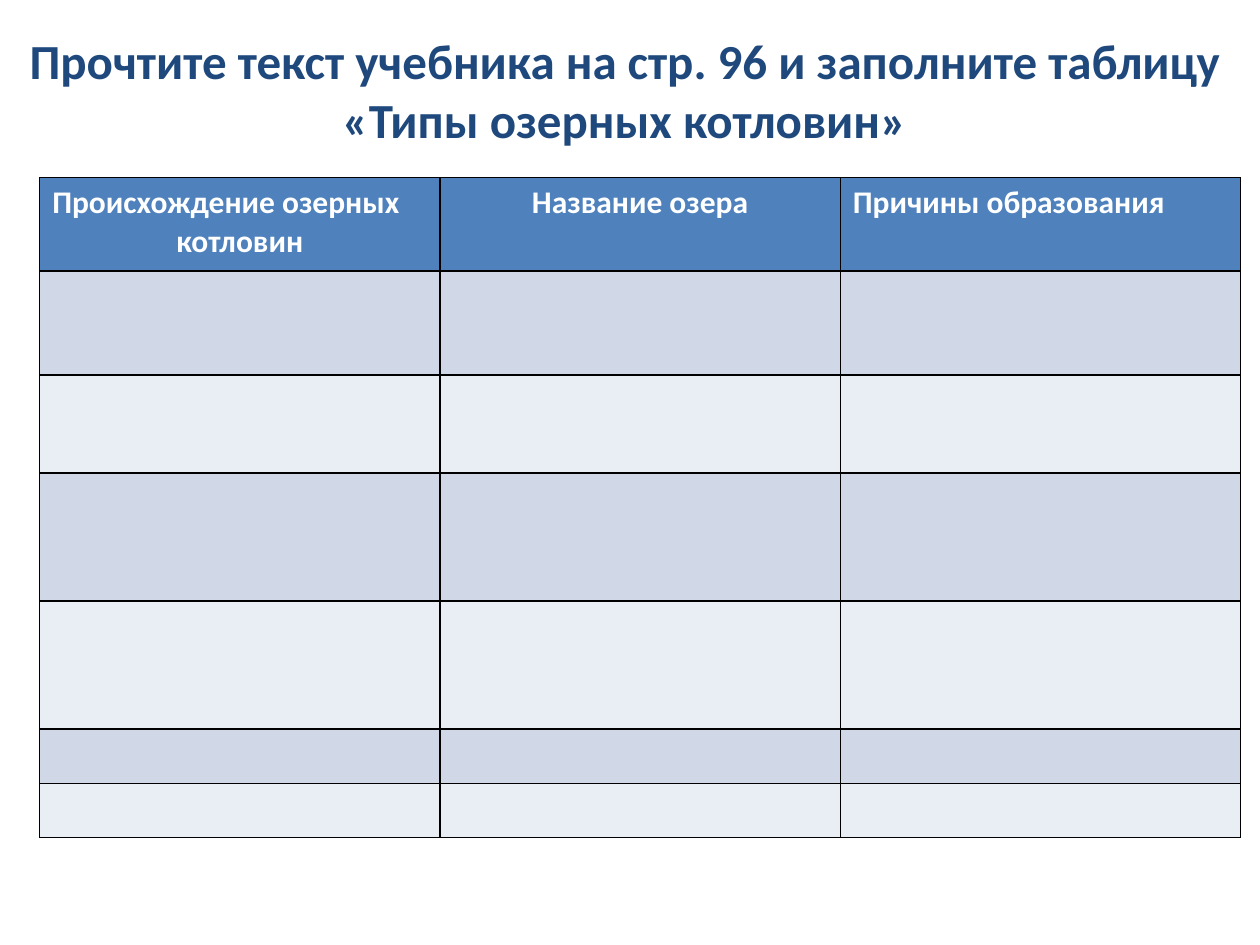
from dataclasses import dataclass

from lxml.etree import SubElement
from pptx import Presentation
from pptx.dml.color import RGBColor
from pptx.enum.text import MSO_ANCHOR, PP_ALIGN
from pptx.oxml.ns import qn
from pptx.util import Cm, Pt


@dataclass(frozen=True)
class Theme:
    font: str = "Calibri"
    title_size: int = 28
    table_size: int = 18
    title: str = "1F497D"
    header_text: str = "FFFFFF"
    header_fill: str = "4F81BD"
    bands: tuple = ("D0D8E8", "E9EDF4")
    border: str = "000000"
    border_width: int = 1


THEME = Theme()
TITLE = "Прочтите текст учебника на стр. 96 и заполните таблицу \v«Типы озерных котловин» "
# Each column heading is a list of (text, alignment) paragraphs
HEADINGS = [
    [("Происхождение озерных", PP_ALIGN.LEFT), ("котловин", PP_ALIGN.CENTER)],
    [("Название озера", PP_ALIGN.CENTER)],
    [("Причины образования", PP_ALIGN.LEFT)],
]
COLUMN_WIDTH = 8.07
ROW_HEIGHTS = [1.88, 2.1, 1.98, 2.58, 2.58, 1.09, 1.09]


def write_paragraph(p, text, align, size, color):
    p.text = text
    p.alignment = align
    p.font.name = THEME.font
    p.font.size = Pt(size)
    p.font.bold = True
    p.font.color.rgb = RGBColor.from_string(color)


def add_title(s):
    tf = s.shapes.add_textbox(Cm(0), Cm(0.2), Cm(25.4), Cm(3.2)).text_frame
    tf.word_wrap = True
    tf.vertical_anchor = MSO_ANCHOR.MIDDLE
    write_paragraph(tf.paragraphs[0], TITLE, PP_ALIGN.CENTER,
                    THEME.title_size, THEME.title)


def style_cell(cell, fill):
    # Borders must come before the fill in the cell properties
    tc_pr = cell._tc.get_or_add_tcPr()
    for side in ("a:lnL", "a:lnR", "a:lnT", "a:lnB"):
        ln = SubElement(tc_pr, qn(side), w=str(Pt(THEME.border_width)))
        solid = SubElement(ln, qn("a:solidFill"))
        SubElement(solid, qn("a:srgbClr"), val=THEME.border)
    cell.fill.solid()
    cell.fill.fore_color.rgb = RGBColor.from_string(fill)


def fill_heading(cell, heading):
    tf = cell.text_frame
    for i, (text, align) in enumerate(heading):
        p = tf.add_paragraph() if i else tf.paragraphs[0]
        write_paragraph(p, text, align, THEME.table_size, THEME.header_text)


def add_basin_table(s):
    table = s.shapes.add_table(
        len(ROW_HEIGHTS), len(HEADINGS), Cm(0.8), Cm(3.58),
        Cm(COLUMN_WIDTH * len(HEADINGS)), Cm(sum(ROW_HEIGHTS))).table
    for column in table.columns:
        column.width = Cm(COLUMN_WIDTH)

    # Header row, then alternating bands
    for i, (row, height) in enumerate(zip(table.rows, ROW_HEIGHTS)):
        row.height = Cm(height)
        fill = THEME.bands[(i - 1) % 2] if i else THEME.header_fill
        for cell in row.cells:
            style_cell(cell, fill)
            cell.text_frame.paragraphs[0].font.size = Pt(THEME.table_size)
    for cell, heading in zip(table.rows[0].cells, HEADINGS):
        fill_heading(cell, heading)


def main():
    prs = Presentation()
    prs.slide_width, prs.slide_height = Cm(25.4), Cm(19.05)
    s = prs.slides.add_slide(prs.slide_layouts[6])
    add_title(s)
    add_basin_table(s)
    prs.save("out.pptx")


if __name__ == "__main__":
    main()
